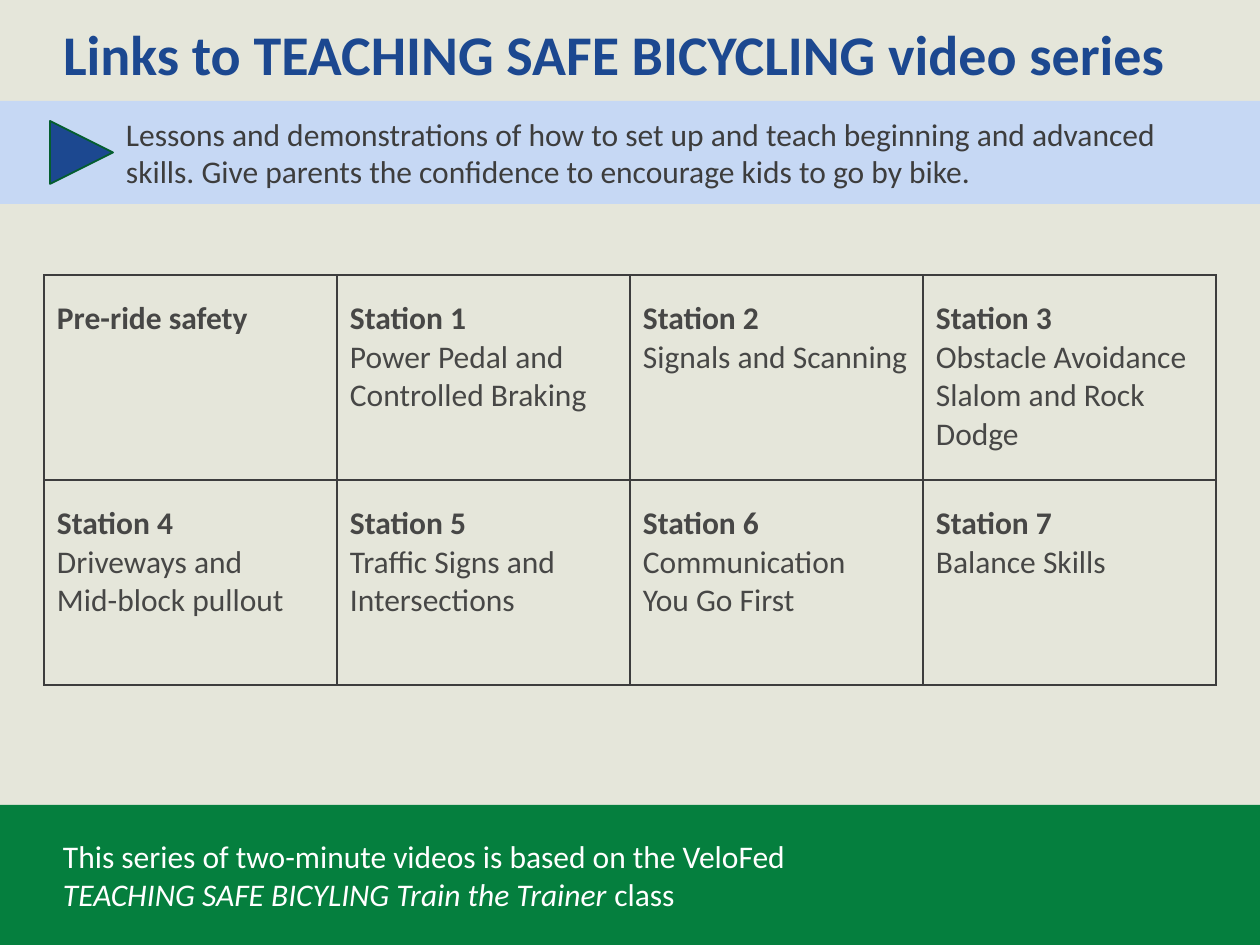
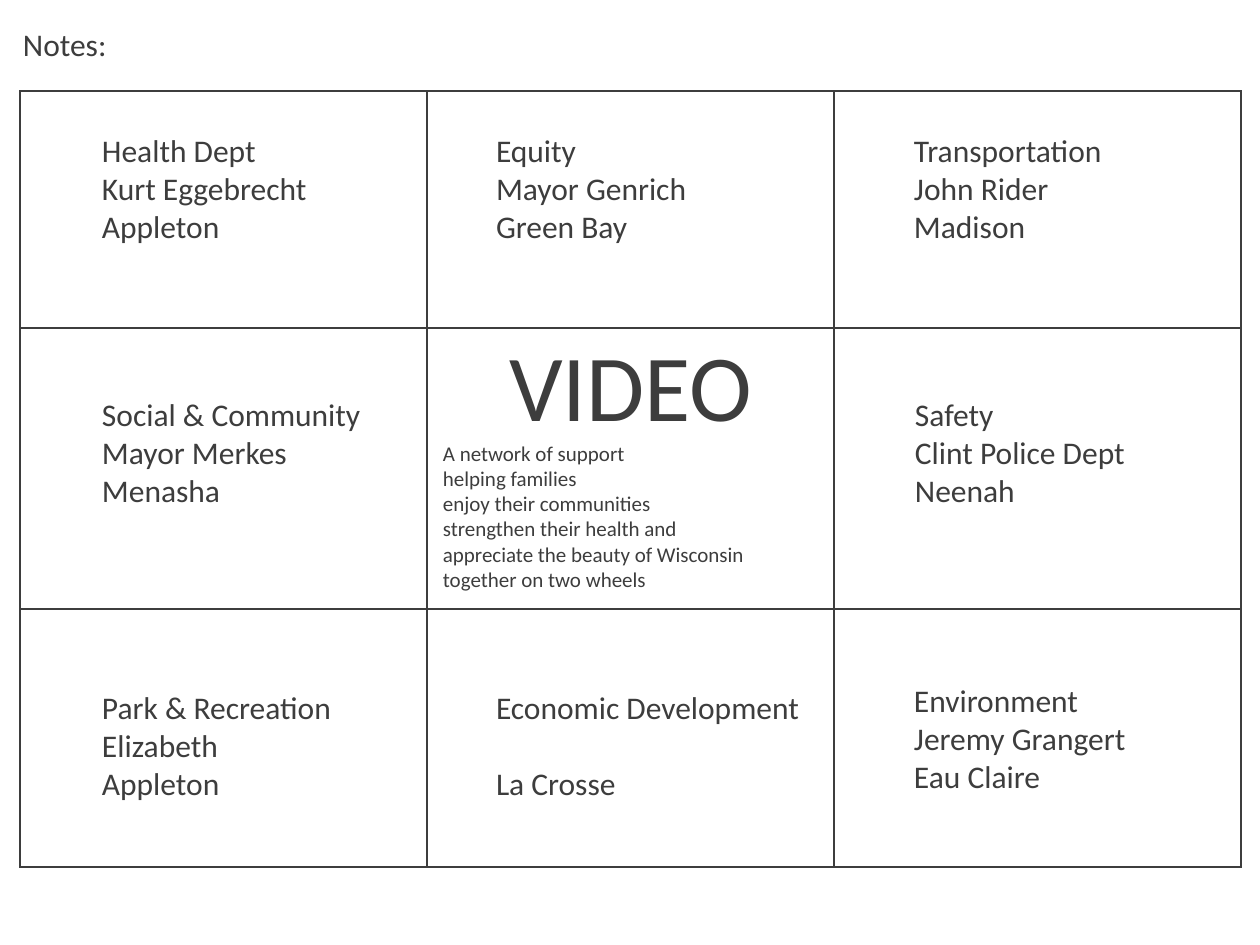
import pptx
import pptx.util
import pptx.dml.color
import pptx.enum.shapes
import pptx.enum.text
import pptx.oxml
import pptx.oxml.ns

EMU_PER_PX = 914400 / 126
FONT = "Calibri"
COLORS = {
    "sand": "E5E6DA",
    "white": "FFFFFF",
    "blue": "1C4890",
    "pale_blue": "C6D8F4",
    "green": "057F3E",
    "dark_green": "045E2E",
    "ink": "3D3D3D",
    "cell_ink": "474746",
}
BODY_SIZE = 18
BODY_INSETS = (13, 6, 13, 6)

TITLE = "Links to TEACHING SAFE BICYCLING video series"
INTRO = ("Lessons and demonstrations of how to set up and teach beginning and "
         "advanced skills. Give parents the confidence to encourage kids to go by bike.")
FOOTER = [
    ("This series of two-minute videos is based on the VeloFed ", {}),
    ("\n", {}),
    ("TEACHING SAFE BICYLING Train the Trainer", {"italic": True}),
    (" class", {}),
]
STATIONS = [
    [
        ["Pre-ride safety"],
        ["Station 1", "Power Pedal and Controlled Braking"],
        ["Station 2", "Signals and Scanning"],
        ["Station 3", "Obstacle Avoidance", "Slalom and Rock Dodge"],
    ],
    [
        ["Station 4", "Driveways and", "Mid-block pullout"],
        ["Station 5", "Traffic Signs and", "Intersections"],
        ["Station 6", "Communication", "You Go First"],
        ["Station 7", "Balance Skills"],
    ],
]

# Left, top, width and the lines of each contact
CONTACTS = [
    (89, 125, 248, ["Health Dept", "Kurt Eggebrecht", "Appleton"]),
    (483, 125, 218, ["Equity", "Mayor Genrich", "Green Bay"]),
    (901, 125, 218, ["Transportation", "John Rider", "Madison"]),
    (89, 389, 349, ["Social & Community Mayor Merkes", "Menasha"]),
    (902, 389, 260, ["Safety", "Clint Police Dept", "Neenah"]),
    (89, 682, 271, ["Park & Recreation", "Elizabeth", "Appleton"]),
    (483, 682, 336, ["Economic Development", "La Crosse"]),
    (901, 675, 271, ["Environment", "Jeremy Grangert", "Eau Claire"]),
]
SPACE_BEFORE = {"La Crosse": 22}
VIDEO_HEADING = "VIDEO"
VIDEO_LINES = [
    "A network of support",
    "helping families",
    "enjoy their communities",
    "strengthen their health and",
    "appreciate the beauty of Wisconsin",
    "together on two wheels",
]


def px(*lengths):
    return [pptx.util.Emu(round(length * EMU_PER_PX)) for length in lengths]


def rgb(name):
    return pptx.dml.color.RGBColor.from_string(COLORS[name])


def new_slide(deck, layout_name, background):
    slide = deck.slides.add_slide(deck.slide_layouts.get_by_name(layout_name))
    slide.background.fill.solid()
    slide.background.fill.fore_color.rgb = rgb(background)
    return slide


def set_insets(holder, insets):
    """Set left, top, right and bottom margins of a text frame or a table cell."""
    (holder.margin_left, holder.margin_top,
     holder.margin_right, holder.margin_bottom) = px(*insets)


def add_span(para, text, color, size=BODY_SIZE, bold=False, italic=False):
    if text == "\n":
        para.add_line_break()
        return
    span = para.add_run()
    span.text = text
    font = span.font
    font.name, font.size = FONT, pptx.util.Pt(size)
    font.bold, font.italic = bold, italic
    font.color.rgb = rgb(color)


def write(frame, paragraphs, color):
    """Fill a frame; each paragraph is a list of (text, format) spans."""
    for index, spans in enumerate(paragraphs):
        para = frame.paragraphs[0] if index == 0 else frame.add_paragraph()
        para.alignment = pptx.enum.text.PP_ALIGN.LEFT
        for text, style in spans:
            add_span(para, text, color, **style)
            if text in SPACE_BEFORE:
                para.space_before = pptx.util.Pt(SPACE_BEFORE[text])


def plain(lines, **style):
    return [[(line, style)] for line in lines]


def add_text(slide, place, paragraphs):
    box = slide.shapes.add_textbox(*px(*place))
    box.text_frame.word_wrap = True
    set_insets(box.text_frame, BODY_INSETS)
    write(box.text_frame, paragraphs, "ink")
    return box


def add_filled(slide, kind, place, fill, line=None):
    shape = slide.shapes.add_shape(kind, *px(*place))
    shape.shadow.inherit = False
    shape.fill.solid()
    shape.fill.fore_color.rgb = rgb(fill)
    if line:
        shape.line.color.rgb = rgb(line)
        shape.line.width = pptx.util.Pt(1)
    else:
        shape.line.fill.background()
    return shape


def add_band(slide, top, height, fill, spans, color, insets):
    band = add_filled(slide, pptx.enum.shapes.MSO_SHAPE.RECTANGLE,
                      (0, top, 1260, height), fill)
    band.text_frame.vertical_anchor = pptx.enum.text.MSO_ANCHOR.MIDDLE
    band.text_frame.word_wrap = True
    set_insets(band.text_frame, insets)
    write(band.text_frame, [spans], color)


def add_borders(cell):
    properties = cell._tc.get_or_add_tcPr()
    for index, side in enumerate(("lnL", "lnR", "lnT", "lnB")):
        properties.insert(index, pptx.oxml.parse_xml(
            f'<a:{side} {pptx.oxml.ns.nsdecls("a")} w="12700"><a:solidFill>'
            f'<a:srgbClr val="{COLORS["ink"]}"/></a:solidFill></a:{side}>'))


def add_grid(slide, left, top, column_width, columns, row_heights):
    place = px(left, top, column_width * columns, sum(row_heights))
    table = slide.shapes.add_table(len(row_heights), columns, *place).table
    table.first_row = table.horz_banding = False
    for column in table.columns:
        column.width = px(column_width)[0]
    for row, height in zip(table.rows, px(*row_heights)):
        row.height = height
    for cell in table.iter_cells():
        cell.fill.background()
        add_borders(cell)
    return table


def build_video_links(deck):
    slide = new_slide(deck, "Title Only", "sand")
    title = slide.shapes.title
    title.left, title.top, title.width, title.height = px(0, 13, 1260, 101)
    frame = title.text_frame
    frame.auto_size = pptx.enum.text.MSO_AUTO_SIZE.NONE
    frame.vertical_anchor = pptx.enum.text.MSO_ANCHOR.TOP
    set_insets(frame, (63, 6, 13, 6))
    write(frame, plain([TITLE], size=32, bold=True), "blue")

    add_band(slide, 101, 103, "pale_blue", [(INTRO, {})], "ink", (126, 6, 63, 6))
    play = add_filled(slide, pptx.enum.shapes.MSO_SHAPE.ISOSCELES_TRIANGLE,
                      (50, 121, 63, 63), "blue", "dark_green")
    play.rotation = 90
    add_band(slide, 805, 140, "green", FOOTER, "white", (63, 13, 13, 13))

    table = add_grid(slide, 44, 275, 293, 4, [205, 205])
    for row, stations in enumerate(STATIONS):
        for column, (name, *skills) in enumerate(stations):
            cell = table.cell(row, column)
            set_insets(cell, (13, 25, 13, 6))
            write(cell.text_frame, plain([name], bold=True) + plain(skills), "cell_ink")


def build_contacts(deck):
    slide = new_slide(deck, "Blank", "white")
    add_grid(slide, 20, 91, 407, 3, [237, 281, 258])
    add_text(slide, (10, 19, 389, 50), plain(["Notes:"]))
    for left, top, width, lines in CONTACTS:
        add_text(slide, (left, top, width, 127), plain(lines))
    video = add_text(slide, (430, 321, 401, 280),
                     plain([VIDEO_HEADING], size=54) + plain(VIDEO_LINES, size=12))
    video.text_frame.paragraphs[0].alignment = pptx.enum.text.PP_ALIGN.CENTER


def main():
    deck = pptx.Presentation()
    deck.slide_width, deck.slide_height = px(1260, 945)
    build_video_links(deck)
    build_contacts(deck)
    deck.save("out.pptx")


if __name__ == "__main__":
    main()
